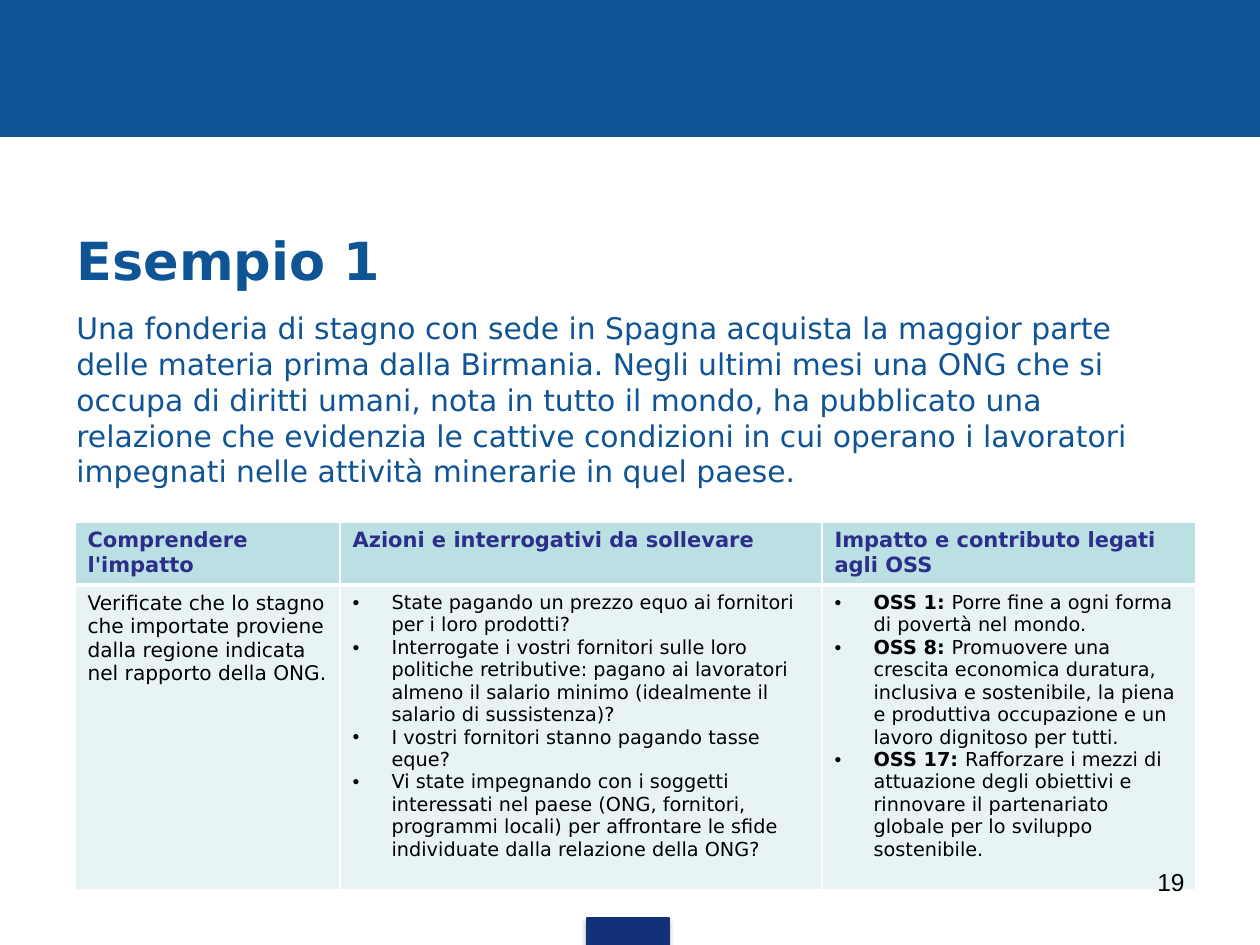
from lxml import etree
from pptx import Presentation
from pptx import oxml
from pptx import util as u
from pptx.dml.color import RGBColor
from pptx.enum import shapes, text
from pptx.oxml import ns

PX = 914400 / 126
BLUE = RGBColor(0x0F, 0x54, 0x94)
NAVY = RGBColor(0x13, 0x31, 0x76)
INDIGO = RGBColor(0x2D, 0x2D, 0x8A)
TEAL = RGBColor(0xBB, 0xE0, 0xE3)
PALE_TEAL = RGBColor(0xE7, 0xF3, 0xF4)
BLACK = RGBColor(0, 0, 0)
FONT = "DejaVu Sans"

INTRODUCTION = (
    "Una fonderia di stagno con sede in Spagna acquista la maggior parte delle "
    "materia prima dalla Birmania. Negli ultimi mesi una ONG che si occupa di "
    "diritti umani, nota in tutto il mondo, ha pubblicato una relazione che "
    "evidenzia le cattive condizioni in cui operano i lavoratori impegnati nelle "
    "attività minerarie in quel paese."
)
HEADINGS = [
    "Comprendere l'impatto",
    "Azioni e interrogativi da sollevare",
    "Impatto e contributo legati agli OSS",
]
UNDERSTANDING = (
    "Verificate che lo stagno che importate proviene dalla regione indicata nel "
    "rapporto della ONG."
)
ACTIONS = [
    ("", "State pagando un prezzo equo ai fornitori per i loro prodotti?"),
    ("", "Interrogate i vostri fornitori sulle loro politiche retributive: pagano ai "
         "lavoratori almeno il salario minimo (idealmente il salario di sussistenza)?"),
    ("", "I vostri fornitori stanno pagando tasse eque?"),
    ("", "Vi state impegnando con i soggetti interessati nel paese (ONG, fornitori, "
         "programmi locali) per affrontare le sfide individuate dalla relazione della ONG?"),
]
GOALS = [
    ("OSS 1: ", "Porre fine a ogni forma di povertà nel mondo."),
    ("OSS 8: ", "Promuovere una crescita economica duratura, inclusiva e sostenibile, "
                "la piena e produttiva occupazione e un lavoro dignitoso per tutti."),
    ("OSS 17: ", "Rafforzare i mezzi di attuazione degli obiettivi e rinnovare il "
                 "partenariato globale per lo sviluppo sostenibile."),
]


def px(length):
    """Turn pixels into EMU."""
    return u.Emu(round(length * PX))


def style(paragraph, size, color, bold=False, name=FONT):
    """Set the font of a whole paragraph."""
    font = paragraph.font
    font.name, font.size, font.bold = name, u.Pt(size), bold
    font.color.rgb = color


def add_block(slide, box, color):
    """Add a plain filled rectangle."""
    shape = slide.shapes.add_shape(shapes.MSO_SHAPE.RECTANGLE, *map(px, box))
    shape.shadow.inherit = False
    shape.fill.solid()
    shape.fill.fore_color.rgb = color
    shape.line.color.rgb = color
    shape.line.width = u.Pt(0.75)
    return shape


def add_tab(slide, box):
    """Add the footer tab with its soft shadow."""
    effects = add_block(slide, box, NAVY)._element.spPr.find(ns.qn("a:effectLst"))
    effects.append(oxml.parse_xml(
        f'<a:outerShdw {ns.nsdecls("a")} blurRad="39370" dist="22860" dir="5400000">'
        '<a:srgbClr val="000000"><a:alpha val="35000"/></a:srgbClr></a:outerShdw>'))


def place_title(slide, box, wording):
    """Move and format the title placeholder."""
    title = slide.shapes.title
    title.left, title.top, title.width, title.height = map(px, box)
    frame = title.text_frame
    frame.text = wording
    frame.auto_size = text.MSO_AUTO_SIZE.NONE
    frame.vertical_anchor = text.MSO_ANCHOR.MIDDLE
    frame.paragraphs[0].alignment = text.PP_ALIGN.LEFT
    style(frame.paragraphs[0], 30, BLUE, True)


def add_text(slide, box, wording, size, color, name=FONT, alignment=text.PP_ALIGN.LEFT):
    """Add a wrapped text box with one paragraph."""
    frame = slide.shapes.add_textbox(*map(px, box)).text_frame
    frame.word_wrap = True
    paragraph = frame.paragraphs[0]
    paragraph.text = wording
    paragraph.alignment = alignment
    style(paragraph, size, color, name=name)


def format_cell(cell, color, bottom_width):
    """Give a cell white borders and a fill."""
    properties = cell._tc.get_or_add_tcPr()
    for side, width in (("L", 1), ("R", 1), ("T", 1), ("B", bottom_width)):
        line = etree.SubElement(properties, ns.qn(f"a:ln{side}"), w=str(u.Pt(width)))
        fill = etree.SubElement(line, ns.qn("a:solidFill"))
        etree.SubElement(fill, ns.qn("a:srgbClr"), val="FFFFFF")
    cell.fill.solid()
    cell.fill.fore_color.rgb = color


def fill_bullets(cell, items):
    """Write bulleted items, each with an optional bold lead."""
    frame = cell.text_frame
    for index, (lead, wording) in enumerate(items):
        paragraph = frame.add_paragraph() if index else frame.paragraphs[0]
        properties = paragraph._p.get_or_add_pPr()
        properties.set("marL", str(px(39)))
        properties.set("indent", str(-px(39)))
        etree.SubElement(properties, ns.qn("a:buFont"), typeface="Arial")
        etree.SubElement(properties, ns.qn("a:buChar"), char="•")
        style(paragraph, 11, BLACK)
        if lead:
            run = paragraph.add_run()
            run.text = lead
            run.font.bold = True
        paragraph.add_run().text = wording


def add_impact_table(slide, box):
    """Add the table of impact, actions and goals."""
    table = slide.shapes.add_table(2, 3, *map(px, box)).table
    for column, width in zip(table.columns, (265, 482, box[2] - 747)):
        column.width = px(width)
    for row, height in zip(table.rows, (61, box[3] - 61)):
        row.height = px(height)
    for column, heading in enumerate(HEADINGS):
        header = table.cell(0, column)
        format_cell(header, TEAL, 3)
        header.text = heading
        style(header.text_frame.paragraphs[0], 12, INDIGO, True)
        format_cell(table.cell(1, column), PALE_TEAL, 1)
    table.cell(1, 0).text = UNDERSTANDING
    style(table.cell(1, 0).text_frame.paragraphs[0], 11.5, BLACK)
    fill_bullets(table.cell(1, 1), ACTIONS)
    fill_bullets(table.cell(1, 2), GOALS)


def main():
    """Build the slide and save it."""
    presentation = Presentation()
    presentation.slide_width, presentation.slide_height = px(1260), px(945)
    slide = presentation.slides.add_slide(presentation.slide_layouts[5])
    add_block(slide, (0, 0, 1260, 136), BLUE)
    add_tab(slide, (587, 918, 82, 27))
    place_title(slide, (64, 195, 1134, 129), "Esempio 1")
    add_text(slide, (64, 304, 1134, 200), INTRODUCTION, 17, BLUE)
    add_impact_table(slide, (75, 522, 1121, 366))
    add_text(slide, (903, 861, 294, 66), "19", 14, BLACK, "Arial", text.PP_ALIGN.RIGHT)
    presentation.save("out.pptx")


if __name__ == "__main__":
    main()
